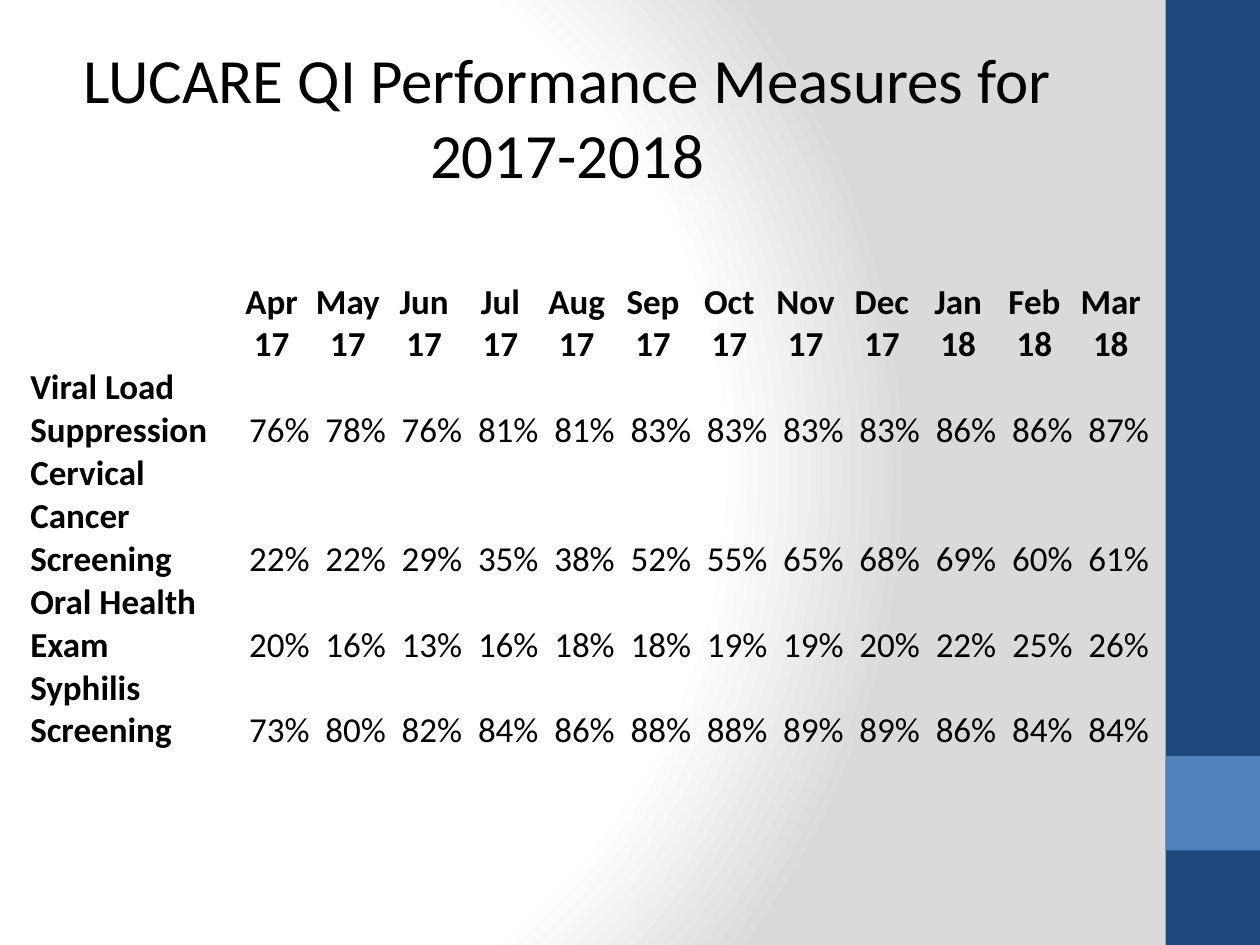
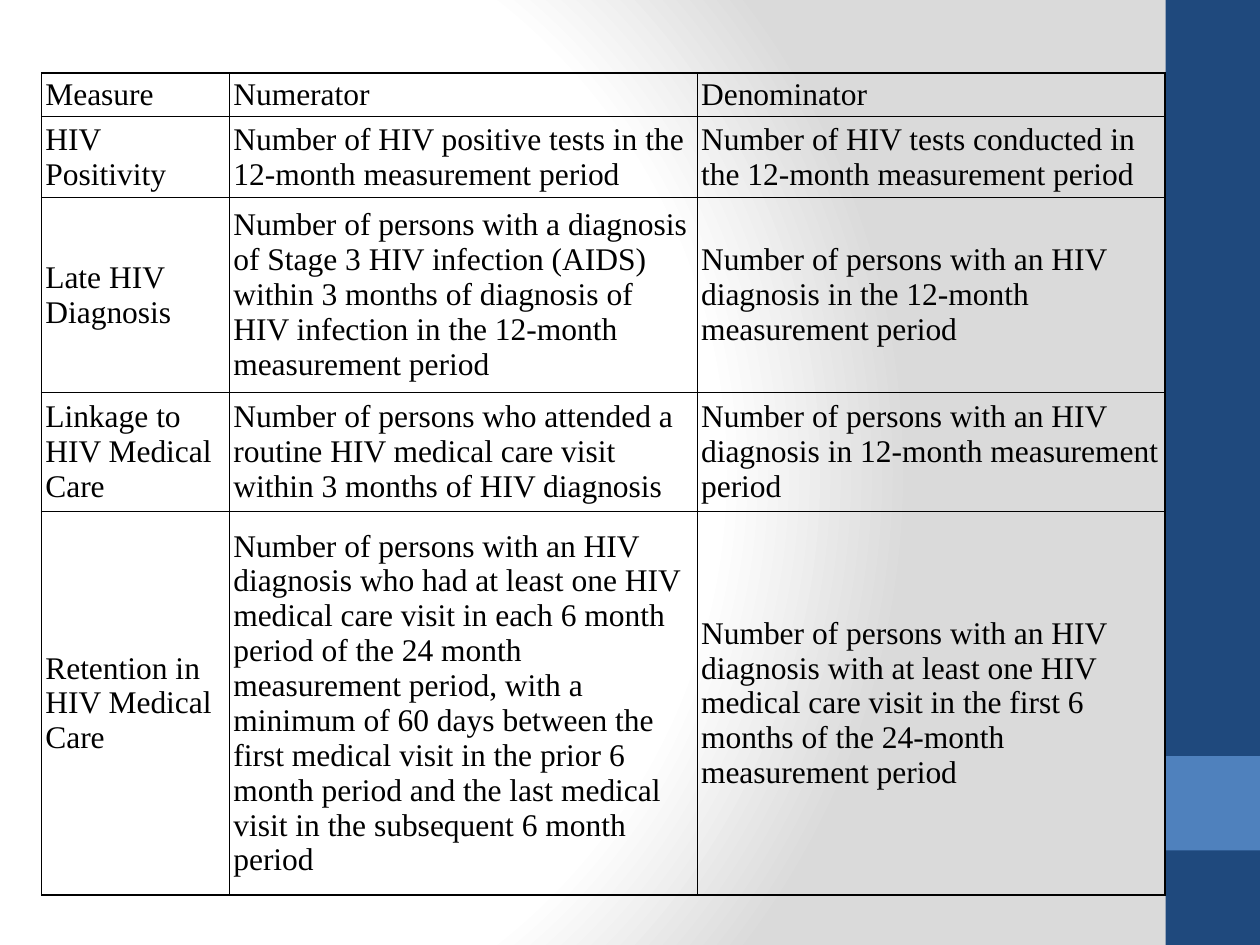
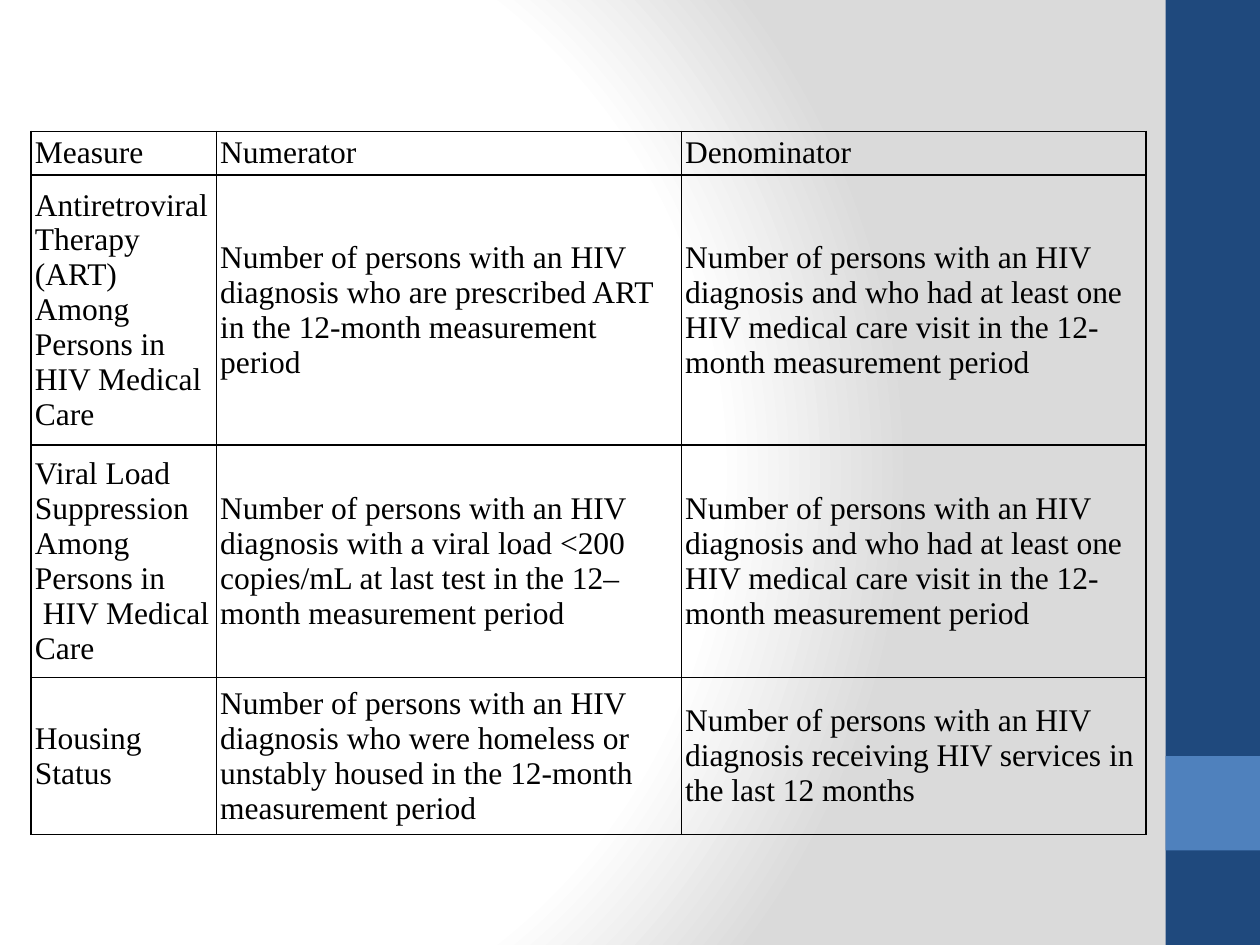
from dataclasses import dataclass

from lxml.etree import SubElement
from pptx import Presentation
from pptx.dml.color import RGBColor
from pptx.enum.shapes import MSO_SHAPE
from pptx.enum.text import MSO_ANCHOR, PP_ALIGN
from pptx.oxml import parse_xml
from pptx.oxml.ns import nsdecls, qn
from pptx.util import Inches, Pt

SLIDE_WIDTH, SLIDE_HEIGHT = Inches(10), Inches(7.5)
UNIT = SLIDE_HEIGHT / 10  # side of one square of the slide grid

BLACK, NAVY, BLUE = "000000", "1F497D", "4F81BD"
BACKGROUND_STOPS = [(0, "FFFFFF"), (75, "FFFFFF"), (100, "DADADA")]


@dataclass(frozen=True)
class Box:
    """A place on the slide, in grid units."""
    left: float
    top: float
    width: float
    height: float

    def lengths(self) -> tuple[int, ...]:
        return tuple(grid(n) for n in (self.left, self.top, self.width, self.height))


@dataclass(frozen=True)
class Band:
    top: float
    height: float
    color: str


@dataclass(frozen=True)
class TableStyle:
    font: str
    size: float
    anchor: MSO_ANCHOR
    inset_x: float
    inset_y: float
    border: str | None


@dataclass(frozen=True)
class TableLayout:
    """Place of a table in grid units; columns after the first share the rest."""
    left: float
    top: float
    width: float
    label_width: float
    row_heights: list[float]


BANDS = [Band(0, 10, NAVY), Band(8, 1, BLUE)]
RATE_STYLE = TableStyle("Calibri", 20, MSO_ANCHOR.BOTTOM, 0, 0, None)
DEFINITION_STYLE = TableStyle("Times New Roman", 18, MSO_ANCHOR.MIDDLE, 0.04, 0.03, BLACK)

TITLE = "LUCARE QI Performance Measures for 2017-2018"
TITLE_BOX = Box(0.32, 0.36, 11.37, 1.75)

MONTHS = [f"{month} 17" for month in "Apr May Jun Jul Aug Sep Oct Nov Dec".split()]
MONTHS += [f"{month} 18" for month in "Jan Feb Mar".split()]
RATES = {
    "Viral Load Suppression": [76, 78, 76, 81, 81, 83, 83, 83, 83, 86, 86, 87],
    "Cervical Cancer Screening": [22, 22, 29, 35, 38, 52, 55, 65, 68, 69, 60, 61],
    "Oral Health Exam": [20, 16, 13, 16, 18, 18, 19, 19, 20, 22, 25, 26],
    "Syphilis Screening": [73, 80, 82, 84, 86, 88, 88, 89, 89, 86, 84, 84],
}
RATE_LAYOUT = TableLayout(0.32, 2.97, 11.84, 2.15, [0.71] * 6)

DEFINITION_HEADER = ["Measure", "Numerator", "Denominator"]
IN_CARE = ("Number of persons with an HIV diagnosis and who had at least one HIV "
           "medical care visit in the 12-month measurement period")
CARE_DEFINITIONS = [
    ["HIV Positivity",
     "Number of HIV positive tests in the 12-month measurement period",
     "Number of HIV tests conducted in the 12-month measurement period"],
    ["Late HIV Diagnosis",
     "Number of persons with a diagnosis of Stage 3 HIV infection (AIDS) within 3 months "
     "of diagnosis of HIV infection in the 12-month measurement period",
     "Number of persons with an HIV diagnosis in the 12-month measurement period"],
    ["Linkage to HIV Medical Care",
     "Number of persons who attended a routine HIV medical care visit within 3 months "
     "of HIV diagnosis",
     "Number of persons with an HIV diagnosis in 12-month measurement period"],
    ["Retention in HIV Medical Care",
     "Number of persons with an HIV diagnosis who had at least one HIV medical care visit "
     "in each 6 month period of the 24 month measurement period, with a minimum of 60 days "
     "between the first medical visit in the prior 6 month period and the last medical "
     "visit in the subsequent 6 month period",
     "Number of persons with an HIV diagnosis with at least one HIV medical care visit "
     "in the first 6 months of the 24‐month measurement period"],
]
CARE_LAYOUT = TableLayout(0.44, 0.77, 11.89, 1.99, [0.44, 0.84, 2.04, 1.24, 4.04])

TREATMENT_DEFINITIONS = [
    ["Antiretroviral Therapy\n(ART) Among Persons in HIV Medical Care",
     "Number of persons with an HIV diagnosis who are prescribed ART in the 12-month "
     "measurement period",
     IN_CARE],
    ["Viral Load Suppression Among Persons in\n HIV Medical Care",
     "Number of persons with an HIV diagnosis with a viral load <200 copies/mL at last "
     "test in the 12–month measurement period",
     IN_CARE],
    ["Housing Status",
     "Number of persons with an HIV diagnosis who were homeless or unstably housed in "
     "the 12-month measurement period",
     "Number of persons with an HIV diagnosis receiving HIV services in the last 12 months"],
]
TREATMENT_LAYOUT = TableLayout(0.33, 1.39, 11.8, 1.96, [0.44, 2.84, 2.44, 1.64])


def grid(units: float) -> int:
    return round(units * UNIT)


def rgb(color: str) -> RGBColor:
    return RGBColor.from_string(color)


def format_text(frame, font: str, size: float, align: PP_ALIGN, bold: bool = False) -> None:
    for paragraph in frame.paragraphs:
        paragraph.alignment = align
        for run in paragraph.runs:
            run.font.name = font
            run.font.size = Pt(size)
            run.font.bold = bold
            run.font.color.rgb = rgb(BLACK)


def set_master_background(master) -> None:
    master.background.fill.solid()
    properties = master.element.cSld.bg.bgPr
    stops = "".join(f'<a:gs pos="{share * 1000}"><a:srgbClr val="{color}"/></a:gs>'
                    for share, color in BACKGROUND_STOPS)
    gradient = parse_xml(
        f'<a:gradFill {nsdecls("a")} rotWithShape="1"><a:gsLst>{stops}</a:gsLst>'
        '<a:path path="circle"><a:fillToRect l="20000" t="50000" r="100000" b="50000"/>'
        '</a:path></a:gradFill>')
    properties.replace(properties[0], gradient)


def add_master_bands(master, slide) -> None:
    """Draw the side bands on a slide and move them to the master."""
    next_id = max(shape.shape_id for shape in master.shapes) + 1
    left = SLIDE_WIDTH - grid(1)
    for shape_id, band in enumerate(BANDS, next_id):
        side = slide.shapes.add_shape(MSO_SHAPE.RECTANGLE, left, grid(band.top),
                                      grid(1), grid(band.height))
        side.shadow.inherit = False
        side.fill.solid()
        side.fill.fore_color.rgb = rgb(band.color)
        side.line.fill.background()
        side.element.nvSpPr.cNvPr.id = shape_id
        master.element.cSld.spTree.append(side.element)


def set_borders(cell, color: str | None) -> None:
    properties = cell._tc.get_or_add_tcPr()
    for index, edge in enumerate(("a:lnL", "a:lnR", "a:lnT", "a:lnB")):
        line = SubElement(properties, qn(edge), w=str(Pt(1)))
        if color:
            SubElement(SubElement(line, qn("a:solidFill")), qn("a:srgbClr"), val=color)
        else:
            SubElement(line, qn("a:noFill"))
        properties.insert(index, line)


def add_table(slide, rows: list[list[str]], layout: TableLayout, style: TableStyle):
    columns = len(rows[0])
    place = Box(layout.left, layout.top, layout.width, sum(layout.row_heights))
    table = slide.shapes.add_table(len(rows), columns, *place.lengths()).table
    table.first_row = table.horz_banding = False
    value_width = (layout.width - layout.label_width) / (columns - 1)
    for index, column in enumerate(table.columns):
        column.width = grid(value_width if index else layout.label_width)
    for row, height, texts in zip(table.rows, layout.row_heights, rows):
        row.height = grid(height)
        for cell, text in zip(row.cells, texts):
            cell.text_frame.text = text
            cell.vertical_anchor = style.anchor
            cell.margin_left = cell.margin_right = grid(style.inset_x)
            cell.margin_top = cell.margin_bottom = grid(style.inset_y)
            cell.fill.background()
            set_borders(cell, style.border)
            format_text(cell.text_frame, style.font, style.size, PP_ALIGN.LEFT)
    return table


def add_rates_slide(slide) -> None:
    rows = [["", *MONTHS]]
    rows += [[measure, *(f"{rate}%" for rate in rates)] for measure, rates in RATES.items()]
    rows.append([""] * len(rows[0]))
    table = add_table(slide, rows, RATE_LAYOUT, RATE_STYLE)
    for r, row in enumerate(table.rows):
        for c, cell in enumerate(row.cells):
            if c == 0:
                align = PP_ALIGN.LEFT
            else:
                align = PP_ALIGN.RIGHT if r else PP_ALIGN.CENTER
            format_text(cell.text_frame, RATE_STYLE.font, RATE_STYLE.size, align,
                        bold=r == 0 or c == 0)

    title = slide.shapes.add_textbox(*TITLE_BOX.lengths()).text_frame
    title.word_wrap = True
    title.text = TITLE
    format_text(title, "Calibri", 36, PP_ALIGN.CENTER)


def main() -> None:
    deck = Presentation()
    deck.slide_width, deck.slide_height = SLIDE_WIDTH, SLIDE_HEIGHT
    blank = deck.slide_layouts[6]
    rates, care, treatment = (deck.slides.add_slide(blank) for _ in range(3))

    set_master_background(deck.slide_master)
    add_master_bands(deck.slide_master, rates)

    add_rates_slide(rates)
    add_table(care, [DEFINITION_HEADER, *CARE_DEFINITIONS], CARE_LAYOUT, DEFINITION_STYLE)
    add_table(treatment, [DEFINITION_HEADER, *TREATMENT_DEFINITIONS], TREATMENT_LAYOUT,
              DEFINITION_STYLE)
    deck.save("out.pptx")


if __name__ == "__main__":
    main()
